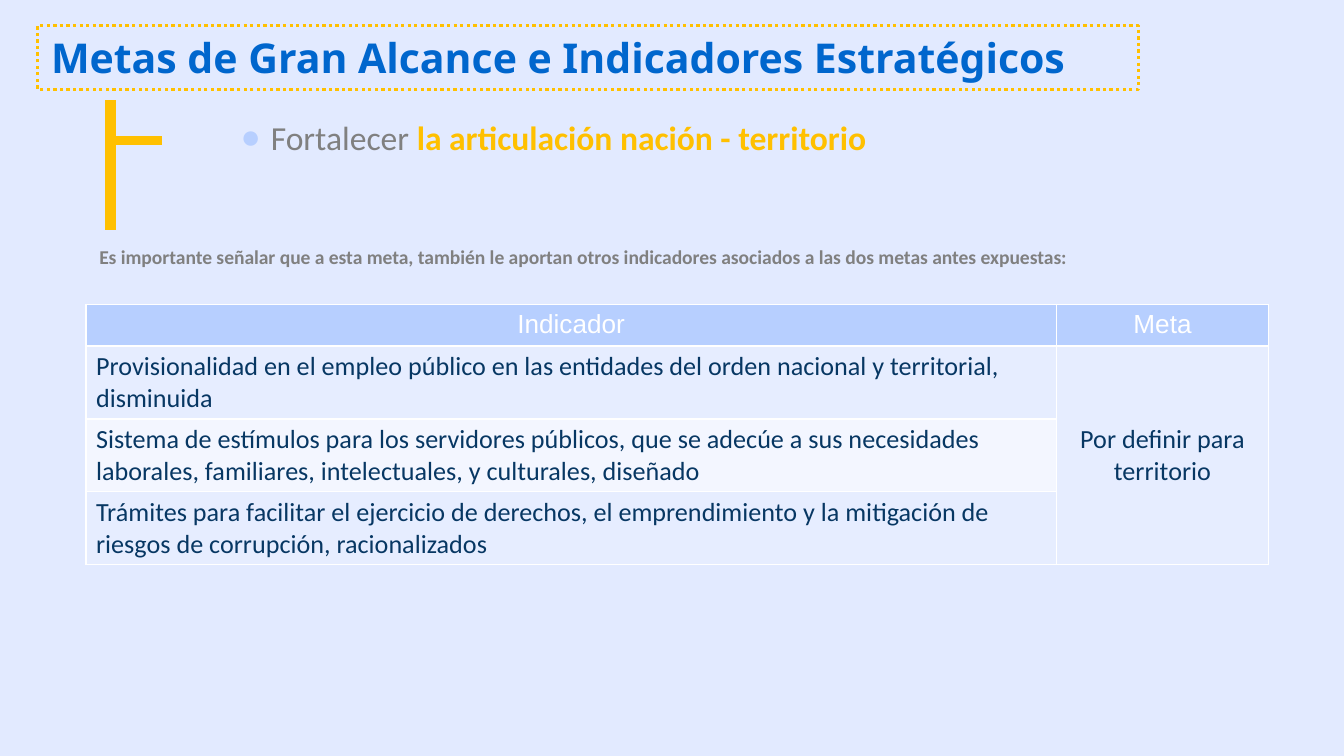
from lxml import etree
from pptx import Presentation
from pptx.dml.color import RGBColor
from pptx.enum.dml import MSO_LINE
from pptx.enum.shapes import MSO_CONNECTOR
from pptx.enum.text import MSO_ANCHOR, MSO_AUTO_SIZE, PP_ALIGN
from pptx.oxml.ns import qn
from pptx.util import Inches, Pt

LEFT, CENTER, JUSTIFY = PP_ALIGN.LEFT, PP_ALIGN.CENTER, PP_ALIGN.JUSTIFY
TOP, MIDDLE = MSO_ANCHOR.TOP, MSO_ANCHOR.MIDDLE
NO_AUTOFIT = MSO_AUTO_SIZE.NONE
STRAIGHT = MSO_CONNECTOR.STRAIGHT
DOTTED = MSO_LINE.ROUND_DOT

THEME = {
    "background": "E2EAFF", "gold": "FFC000", "blue": "0066CD", "gray": "808080",
    "header": "B7CFFF", "band": "E6EDFF", "light band": "F3F6FF",
    "navy": "073763", "white": "FFFFFF",
    "title size": 22, "goal size": 18, "note size": 10.5, "table size": 14,
}
CELL = Inches(0.1)  # the slide is a grid of 100 columns of this width


def grid(*cells):
    return [int(count * CELL) for count in cells]


def style(paragraph, face, size, color, align, bold=False):
    paragraph.alignment = align
    paragraph.space_before = Pt(0)
    paragraph.font.name = face
    paragraph.font.size = Pt(THEME[size])
    paragraph.font.bold = bold
    paragraph.font.color.rgb = RGBColor.from_string(THEME[color])


deck = Presentation()
deck.slide_width, deck.slide_height = grid(100, 56.25)
slide = deck.slides.add_slide(deck.slide_layouts[1])
slide.background.fill.solid()
slide.background.fill.fore_color.rgb = RGBColor.from_string(THEME["background"])

# Title in a dotted frame
title = slide.shapes.title
title.left, title.top, title.width, title.height = grid(2.8, 1.9, 81.9, 4.75)
title.line.color.rgb = RGBColor.from_string(THEME["gold"])
title.line.width = Pt(1.75)
title.line.dash_style = DOTTED
title.text_frame.text = "Metas de Gran Alcance e Indicadores Estratégicos"
title.text_frame.auto_size = NO_AUTOFIT
title.text_frame.vertical_anchor = MIDDLE
style(title.text_frame.paragraphs[0], "Noto Sans", "title size", "blue", JUSTIFY, True)

# Goal with a round bullet
goal = slide.placeholders[1]
goal.left, goal.top, goal.width, goal.height = grid(12.1, 8.2, 61.5, 4)
goal.fill.solid()
goal.fill.fore_color.rgb = RGBColor.from_string(THEME["background"])
goal.text_frame.auto_size = NO_AUTOFIT
goal.text_frame.vertical_anchor = MIDDLE
goal_line = goal.text_frame.paragraphs[0]
goal_line.level = 2
goal_line.add_run().text = "Fortalecer "
emphasis = goal_line.add_run()
emphasis.text = "la articulación nación - territorio"
emphasis.font.bold = True
emphasis.font.color.rgb = RGBColor.from_string(THEME["gold"])
style(goal_line, "Calibri", "goal size", "gray", JUSTIFY)
goal_format = goal_line._p.get_or_add_pPr()
indent, hanging = grid(7.05, -2.25)
goal_format.set("marL", str(indent))
goal_format.set("indent", str(hanging))
bullet_color = etree.Element(qn("a:buClr"))
etree.SubElement(bullet_color, qn("a:srgbClr"), val=THEME["header"])
bullet_font = etree.Element(qn("a:buFont"), typeface="Arial")
bullet = etree.Element(qn("a:buChar"), char="●")
defaults = goal_format.find(qn("a:defRPr"))
for part in (bullet_color, bullet_font, bullet):
    defaults.addprevious(part)

# Gold bracket
for ends, weight in (((8.25, 7.45, 8.25, 17.1), 6), ((8.25, 10.45, 12.05, 10.45), 4.5)):
    bar = slide.shapes.add_connector(STRAIGHT, *grid(*ends))
    bar.line.color.rgb = RGBColor.from_string(THEME["gold"])
    bar.line.width = Pt(weight)
    etree.SubElement(bar._element.spPr, qn("a:effectLst"))

# Note above the table
note = slide.shapes.add_textbox(*grid(6.4, 17.75, 95.1, 2.8)).text_frame
note.word_wrap = True
note.text = ("Es importante señalar que a esta meta, también le aportan otros "
             "indicadores asociados a las dos metas antes expuestas:")
style(note.paragraphs[0], "Calibri", "note size", "gray", JUSTIFY, True)

# Indicator table: one goal spans every indicator
indicators = [
    "Provisionalidad en el empleo público en las entidades del orden nacional "
    "y territorial, disminuida",
    "Sistema de estímulos para los servidores públicos, que se adecúe a sus "
    "necesidades laborales, familiares, intelectuales, y culturales, diseñado",
    "Trámites para facilitar el ejercicio de derechos, el emprendimiento y la "
    "mitigación de riesgos de corrupción, racionalizados",
]
row_count = len(indicators) + 1
table = slide.shapes.add_table(row_count, 2, *grid(6.4, 22.65, 88, 18.9)).table
table.first_row = table.horz_banding = False
for column, width in zip(table.columns, grid(72.2, 15.8)):
    column.width = width
for row, height in zip(table.rows, grid(3, *[5.3] * len(indicators))):
    row.height = height

table.cell(0, 0).text, table.cell(0, 1).text = "Indicador", "Meta"
for number, indicator in enumerate(indicators, start=1):
    table.cell(number, 0).text = indicator
table.cell(1, 1).text = "Por definir para territorio"
table.cell(1, 1).merge(table.cell(row_count - 1, 1))

for r in range(row_count):
    for c in range(2):
        cell = table.cell(r, c)
        is_header, is_goal = r == 0, c == 1
        if is_header:
            band = "header"
        else:
            band = "light band" if r == 2 and not is_goal else "band"
        cell.margin_left = cell.margin_right = Pt(5.4)
        cell.margin_top = cell.margin_bottom = Pt(2.7)
        cell.vertical_anchor = MIDDLE if not is_header and (is_goal or r == 3) else TOP
        style(cell.text_frame.paragraphs[0], "Arial" if is_header else "Calibri",
              "table size", "white" if is_header else "navy",
              CENTER if is_header or is_goal else LEFT)
        # Borders come before the fill in the cell properties
        properties = cell._tc.get_or_add_tcPr()
        for side in ("lnL", "lnR", "lnT", "lnB"):
            border = etree.SubElement(properties, qn(f"a:{side}"), w=str(Pt(1)))
            paint = etree.SubElement(border, qn("a:solidFill"))
            etree.SubElement(paint, qn("a:srgbClr"), val=THEME["white"])
        cell.fill.solid()
        cell.fill.fore_color.rgb = RGBColor.from_string(THEME[band])

deck.save("out.pptx")
